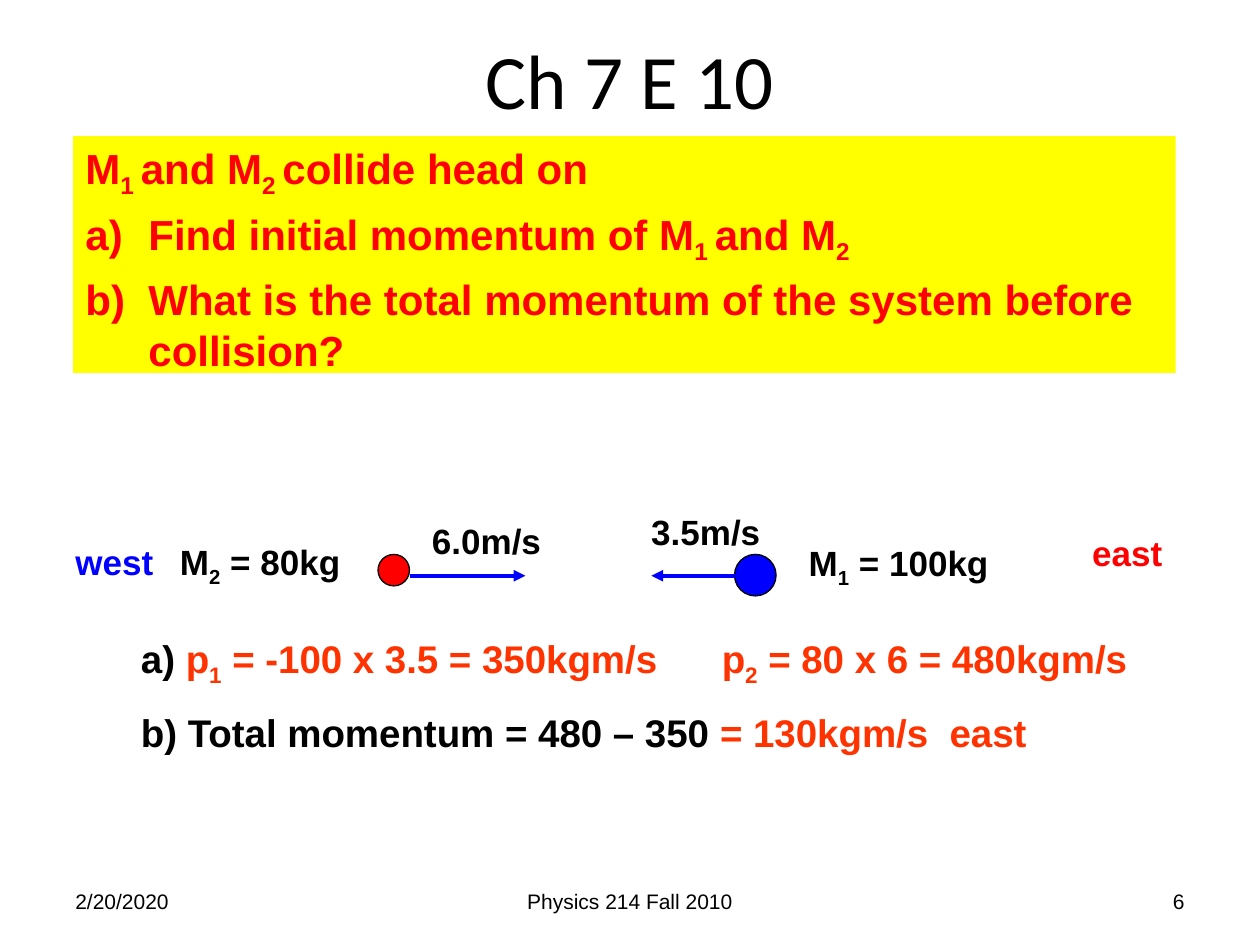
from pptx import Presentation
from pptx.dml.color import RGBColor
from pptx.enum.shapes import MSO_CONNECTOR, MSO_SHAPE
from pptx.enum.text import MSO_ANCHOR, MSO_AUTO_SIZE, PP_ALIGN
from pptx.oxml.ns import qn
from pptx.util import Inches, Pt
from lxml import etree

BLACK = RGBColor(0x00, 0x00, 0x00)
RED = RGBColor(0xFF, 0x00, 0x00)
BLUE = RGBColor(0x00, 0x00, 0xFF)
YELLOW = RGBColor(0xFF, 0xFF, 0x00)
ORANGE = RGBColor(0xFF, 0x33, 0x00)
LEFT, CENTER, RIGHT = PP_ALIGN.LEFT, PP_ALIGN.CENTER, PP_ALIGN.RIGHT
TOP, MIDDLE = MSO_ANCHOR.TOP, MSO_ANCHOR.MIDDLE
FIT_SHAPE = MSO_AUTO_SIZE.SHAPE_TO_FIT_TEXT
RECTANGLE, OVAL = MSO_SHAPE.RECTANGLE, MSO_SHAPE.OVAL
STRAIGHT = MSO_CONNECTOR.STRAIGHT


def inches(*lengths):
    return [Inches(length) for length in lengths]


def add_run(paragraph, text, size, color, bold=True, font="Arial", sub=False):
    run = paragraph.add_run()
    run.text = text
    run.font.size = Pt(size)
    run.font.name = font
    run.font.bold = bold
    run.font.color.rgb = color
    if sub:
        run._r.get_or_add_rPr().set("baseline", "-25000")


def add_pieces(paragraph, pieces, size, color):
    for piece in pieces:
        text, sub = piece if isinstance(piece, tuple) else (piece, False)
        add_run(paragraph, text, size, color, sub=sub)


def add_label(slide, box, wrap=False, anchor=TOP, align=LEFT):
    frame = slide.shapes.add_textbox(*inches(*box)).text_frame
    frame.word_wrap = wrap
    if not wrap:
        frame.auto_size = FIT_SHAPE
    frame.vertical_anchor = anchor
    paragraph = frame.paragraphs[0]
    paragraph.alignment = align
    return paragraph


def add_title(slide, box):
    title = add_label(slide, box, True, MIDDLE, CENTER)
    add_run(title, "Ch 7 E 10", 44, BLACK, bold=False, font="Calibri")


def add_question(slide, box):
    panel = slide.shapes.add_shape(RECTANGLE, *inches(*box))
    panel.shadow.inherit = False
    panel.fill.solid()
    panel.fill.fore_color.rgb = YELLOW
    panel.line.fill.background()
    frame = panel.text_frame
    frame.word_wrap = True
    frame.vertical_anchor = TOP
    lines = [
        ["M", ("1 ", True), "and M", ("2 ", True), "collide head on"],
        ["a)\tFind initial momentum of M", ("1 ", True), "and M", ("2", True)],
        ["b)\tWhat is the total momentum of the system before collision?"],
    ]
    for index, pieces in enumerate(lines):
        paragraph = frame.add_paragraph() if index else frame.paragraphs[0]
        paragraph.alignment = LEFT
        paragraph.space_before = Pt(4.8)
        properties = paragraph._p.get_or_add_pPr()
        properties.set("marL", str(Inches(0.5)))
        properties.set("indent", str(Inches(-0.5)))
        add_pieces(paragraph, pieces, 24, RED)


def add_ball(slide, left, top, diameter, color):
    ball = slide.shapes.add_shape(OVAL, *inches(left, top, diameter, diameter))
    ball.shadow.inherit = False
    ball.fill.solid()
    ball.fill.fore_color.rgb = color
    ball.line.color.rgb = BLACK
    ball.line.width = Pt(0.75)


def add_velocity(slide, start, end, y):
    arrow = slide.shapes.add_connector(STRAIGHT, *inches(start, y, end, y))
    arrow.line.color.rgb = BLUE
    arrow.line.width = Pt(2.25)
    etree.SubElement(arrow.line._get_or_add_ln(), qn("a:tailEnd"), type="triangle")
    etree.SubElement(arrow._element.spPr, qn("a:effectLst"))


def add_collision(slide, box):
    left, top, width, height = box
    add_ball(slide, left + 2.5, top + 0.4, 0.25, RED)
    add_ball(slide, left + 5.33, top + 0.4, 0.33, BLUE)
    for start, end in [(2.75, 3.67), (5.33, 4.67)]:
        add_velocity(slide, left + start, left + end, top + 0.57)
    labels = [
        (2.83, 0.07, 1.08, ["6.0m/s"], BLACK),
        (4.57, 0, 1.08, ["3.5m/s"], BLACK),
        (5.82, 0.25, 1.64, ["M", ("1", True), " = 100kg"], BLACK),
        (0.83, 0.24, 1.48, ["M", ("2", True), " = 80kg"], BLACK),
        (width - 0.76, 0.17, 0.76, ["east"], RED),
        (0, 0.24, 0.82, ["west"], BLUE),
    ]
    for dx, dy, label_width, pieces, color in labels:
        label = add_label(slide, (left + dx, top + dy, label_width, 0.43))
        add_pieces(label, pieces, 20, color)


def add_answers(slide, box):
    left, top, width, height = box
    momenta = add_label(slide, (left, top, width, 0.47), wrap=True)
    tabs = etree.SubElement(momenta._p.get_or_add_pPr(), qn("a:tabLst"))
    etree.SubElement(tabs, qn("a:tab"), pos=str(Inches(4.61)), algn="l")
    add_run(momenta, "a) ", 22, BLACK)
    add_pieces(momenta, ["p", ("1", True), " = -100 x 3.5 = 350kgm/s\tp",
                         ("2", True), " = 80 x 6 = 480kgm/s"], 22, ORANGE)
    total = add_label(slide, (left, top + height - 0.47, 7.28, 0.47))
    add_run(total, "b) Total momentum = 480 – 350 ", 22, BLACK)
    add_run(total, "= 130kgm/s  east", 22, ORANGE)


def add_footer(slide, box):
    left, top, width, height = box
    parts = [
        (left, 2.33, "2/20/2020", LEFT),
        (left + (width - 3.17) / 2, 3.17, "Physics 214 Fall 2010", CENTER),
        (left + width - 2.33, 2.33, "6", RIGHT),
    ]
    for part_left, part_width, text, align in parts:
        part = add_label(slide, (part_left, top, part_width, height),
                         True, MIDDLE, align)
        add_run(part, text, 12, BLACK, bold=False)


def main():
    deck = Presentation()
    deck.slide_width, deck.slide_height = inches(10, 7.5)
    slide = deck.slides.add_slide(deck.slide_layouts[6])
    add_footer(slide, (0.5, 6.95, 9, 0.4))
    add_question(slide, (0.58, 1.08, 8.75, 1.88))
    add_answers(slide, (1.02, 4.99, 8.15, 1.06))
    add_collision(slide, (0.5, 4, 8.83, 0.73))
    add_title(slide, (0.5, 0, 9, 1.25))
    deck.save("out.pptx")


if __name__ == "__main__":
    main()
